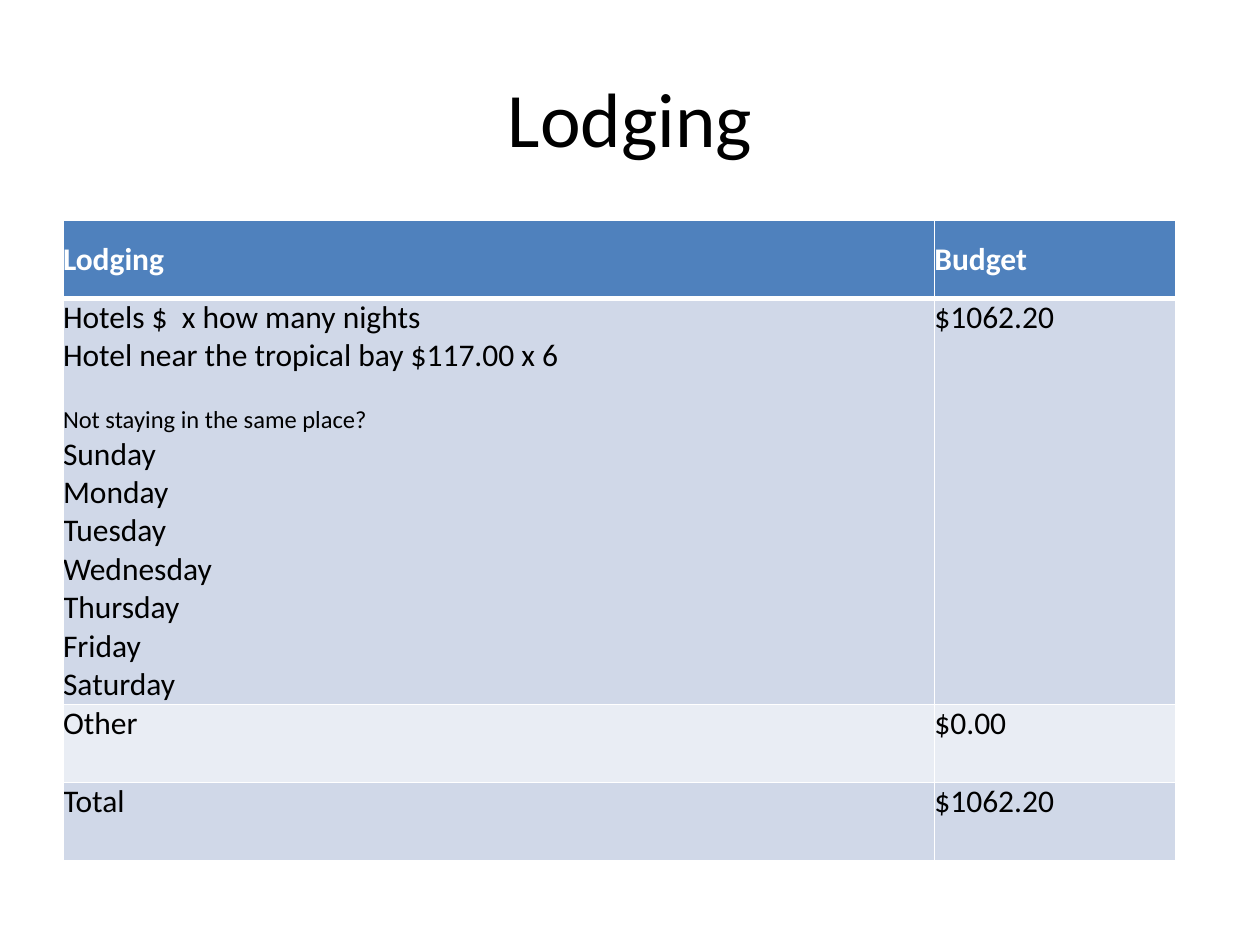
"""Builds the lodging budget slide."""
from lxml import etree
from pptx import Presentation
from pptx import util as u
from pptx.dml.color import RGBColor
from pptx.enum import text
from pptx.oxml.ns import qn

DAYS = ["Sunday", "Monday", "Tuesday", "Wednesday", "Thursday", "Friday", "Saturday"]
NOTE = "Not staying in the same place?"
ROWS = [
    (["Lodging"], "Budget"),
    (["Hotels $  x how many nights", "Hotel near the tropical bay $117.00 x 6", NOTE] + DAYS,
     "$1062.20"),
    (["Other"], "$0.00"),
    (["Total"], "$1062.20"),
]
FILLS = ["4F81BD", "D0D8E8", "E9EDF4", "D0D8E8"]
COL_WIDTHS = [498, 138]
ROW_HEIGHTS = [44.6, 232, 44.6, 44.6]


def rgb(value):
    """Return the colour for a hex string."""
    return RGBColor.from_string(value)


def write(p, content, size=18, color="000000", bold=False, align=None, before=0):
    """Fill a paragraph with one formatted run."""
    p.alignment = align
    p.space_before = u.Pt(before)
    r = p.add_run()
    r.text = content
    r.font.name = "Calibri"
    r.font.size = u.Pt(size)
    r.font.bold = bold
    r.font.color.rgb = rgb(color)


def add_title(s, content):
    """Add the centred slide title."""
    sp = s.shapes.add_textbox(u.Pt(36), u.Pt(21.6), u.Pt(648), u.Pt(90))
    tf = sp.text_frame
    tf.word_wrap = True
    tf.vertical_anchor = text.MSO_ANCHOR.MIDDLE
    write(tf.paragraphs[0], content, size=44, align=text.PP_ALIGN.CENTER)


def set_borders(cell, widths):
    """Draw white cell borders, ahead of the fill in the cell properties."""
    props = cell._tc.get_or_add_tcPr()
    for i, (side, width) in enumerate(widths.items()):
        ln = etree.Element(qn("a:" + side), w=str(u.Pt(width)))
        fill = etree.SubElement(ln, qn("a:solidFill"))
        etree.SubElement(fill, qn("a:srgbClr"), val="FFFFFF")
        props.insert(i, ln)


def fill_cell(cell, lines, fill, header, top, bottom):
    """Format one table cell and write its lines."""
    cell.margin_left = cell.margin_right = cell.margin_top = cell.margin_bottom = 0
    cell.vertical_anchor = text.MSO_ANCHOR.MIDDLE if header else text.MSO_ANCHOR.TOP
    cell.fill.solid()
    cell.fill.fore_color.rgb = rgb(fill)
    set_borders(cell, {"lnL": 1, "lnR": 1, "lnT": top, "lnB": bottom})
    tf = cell.text_frame
    for i, line in enumerate(lines):
        p = tf.add_paragraph() if i else tf.paragraphs[0]
        if line == NOTE:
            write(p, line, size=14, before=17)
        else:
            write(p, line, color="FFFFFF" if header else "000000", bold=header)


def add_budget_table(s):
    """Add the lodging budget table."""
    frame = s.shapes.add_table(len(ROWS), len(COL_WIDTHS), u.Pt(36), u.Pt(126),
                               u.Pt(sum(COL_WIDTHS)), u.Pt(sum(ROW_HEIGHTS)))
    table = frame.table
    for column, width in zip(table.columns, COL_WIDTHS):
        column.width = u.Pt(width)
    for i, (items, budget) in enumerate(ROWS):
        table.rows[i].height = u.Pt(ROW_HEIGHTS[i])
        for j, lines in enumerate((items, [budget])):
            fill_cell(table.cell(i, j), lines, FILLS[i], header=i == 0,
                      top=3 if i == 1 else 1, bottom=3 if i == 0 else 1)


def main():
    """Build and save the presentation."""
    prs = Presentation()
    prs.slide_width, prs.slide_height = u.Pt(720), u.Pt(540)
    s = prs.slides.add_slide(prs.slide_layouts[6])
    add_title(s, "Lodging")
    add_budget_table(s)
    prs.save("out.pptx")


if __name__ == "__main__":
    main()
